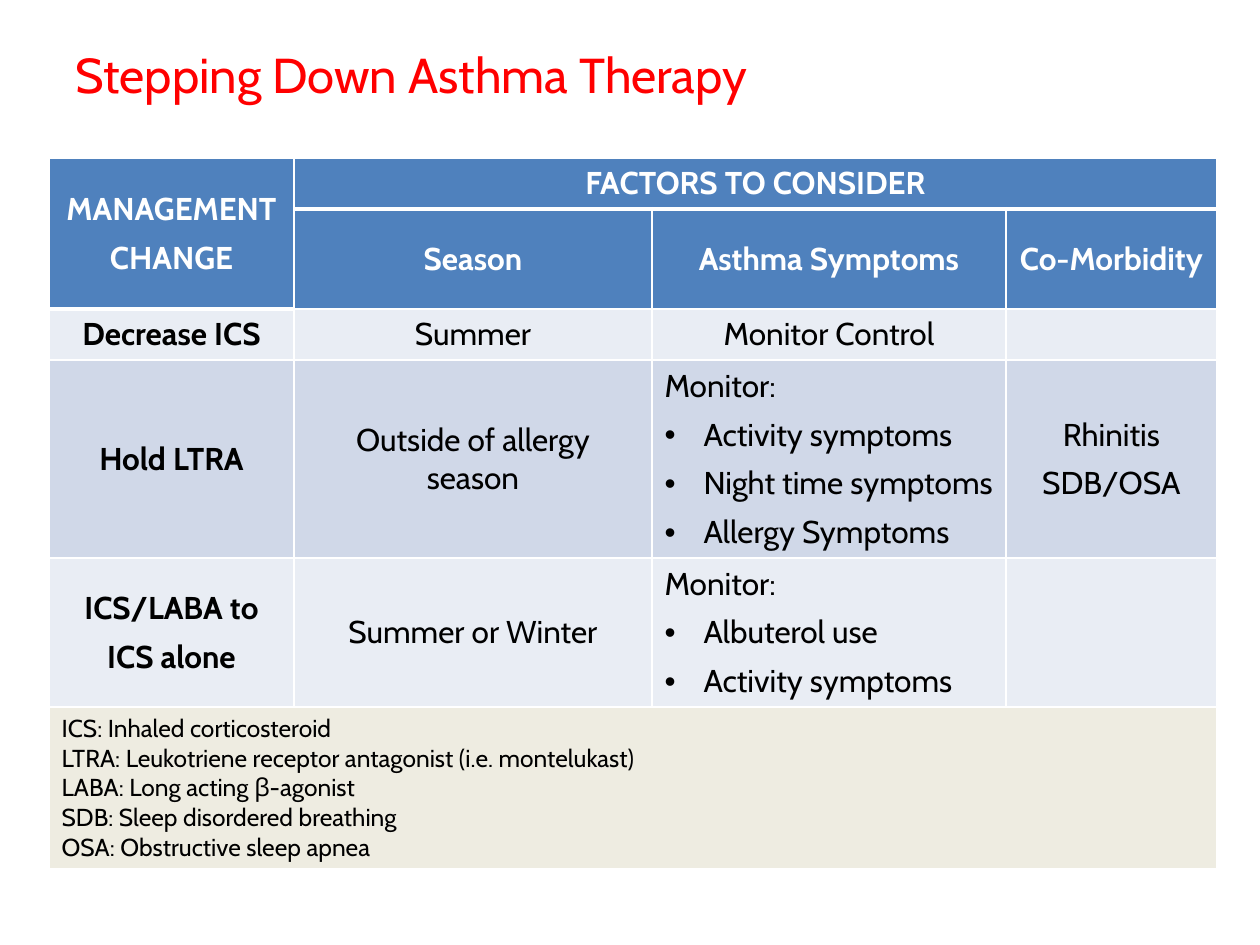
from lxml import etree
from pptx import Presentation
from pptx.dml.color import RGBColor
from pptx.enum.text import MSO_ANCHOR, PP_ALIGN
from pptx.oxml.ns import qn
from pptx.util import Emu, Pt

LEFT, CENTER = PP_ALIGN.LEFT, PP_ALIGN.CENTER
TOP, MIDDLE = MSO_ANCHOR.TOP, MSO_ANCHOR.MIDDLE

RED = RGBColor(0xFF, 0x00, 0x00)
WHITE = RGBColor(0xFF, 0xFF, 0xFF)
BLACK = RGBColor(0x00, 0x00, 0x00)
HEADER_BLUE = RGBColor(0x4F, 0x81, 0xBD)
BAND_LIGHT = RGBColor(0xE9, 0xED, 0xF4)
BAND_DARK = RGBColor(0xD0, 0xD8, 0xE8)
LEGEND_TAN = RGBColor(0xEE, 0xEC, 0xE1)

FONT = "Cabin"
BULLET = "• "
TITLE_ONLY = 5


def px(n):
    return Emu(round(n * 914400 / 126))


def add_border(cell, side, points):
    tc_pr = cell._tc.get_or_add_tcPr()
    line = etree.SubElement(tc_pr, qn(f"a:ln{side}"), w=str(Pt(points)))
    fill = etree.SubElement(line, qn("a:solidFill"))
    etree.SubElement(fill, qn("a:srgbClr"), val=str(WHITE))


prs = Presentation()
prs.slide_width, prs.slide_height = px(1260), px(945)
slide = prs.slides.add_slide(prs.slide_layouts[TITLE_ONLY])

# Title
title = slide.shapes.title
title.left, title.top, title.width, title.height = px(63), px(38), px(1134), px(158)
title.text_frame.text = "Stepping Down Asthma Therapy"
title.text_frame.vertical_anchor = TOP
heading = title.text_frame.paragraphs[0]
heading.alignment = LEFT
heading.font.name, heading.font.size = FONT, Pt(28)
heading.font.color.rgb = RED

# Table content: one list of lines per cell
therapy_rows = [
    [["MANAGEMENT", "CHANGE"], ["FACTORS TO CONSIDER"], [], []],
    [[], ["Season"], ["Asthma Symptoms"], ["Co-Morbidity"]],
    [["Decrease ICS"], ["Summer"], ["Monitor Control"], []],
    [["Hold LTRA"], ["Outside of allergy season"],
     ["Monitor:", "• Activity symptoms", "• Night time symptoms", "• Allergy Symptoms"],
     ["Rhinitis", "SDB/OSA"]],
    [["ICS/LABA to", "ICS alone"], ["Summer or Winter"],
     ["Monitor:", "• Albuterol use", "• Activity symptoms"], []],
    [["ICS: Inhaled corticosteroid",
      "LTRA: Leukotriene receptor antagonist (i.e. montelukast)",
      "LABA: Long acting β-agonist",
      "SDB: Sleep disordered breathing",
      "OSA: Obstructive sleep apnea"], [], [], []],
]
row_fills = [HEADER_BLUE, HEADER_BLUE, BAND_LIGHT, BAND_DARK, BAND_LIGHT, LEGEND_TAN]
row_heights = [50, 100, 51, 198, 149, 161]
column_widths = [245, 358, 354, 211]
LEGEND_ROW = len(therapy_rows) - 1

# Table grid
therapy = slide.shapes.add_table(
    len(row_heights), len(column_widths), px(49), px(158),
    px(sum(column_widths)), px(sum(row_heights))).table
for column, width in zip(therapy.columns, column_widths):
    column.width = px(width)
for row, height in zip(therapy.rows, row_heights):
    row.height = px(height)
therapy.cell(0, 0).merge(therapy.cell(1, 0))
therapy.cell(0, 1).merge(therapy.cell(0, 3))
therapy.cell(LEGEND_ROW, 0).merge(therapy.cell(LEGEND_ROW, 3))

# Cells
for r, row in enumerate(therapy_rows):
    is_header, is_legend = r < 2, r == LEGEND_ROW
    for c, lines in enumerate(row):
        cell = therapy.cell(r, c)
        under_header = r == 0 or (r, c) == (1, 0)
        for side, points in (("L", 1), ("R", 1), ("T", 1), ("B", 3 if under_header else 1)):
            add_border(cell, side, points)
        cell.fill.solid()
        cell.fill.fore_color.rgb = row_fills[r]
        cell.vertical_anchor = MIDDLE
        if not lines:
            continue

        cell.text_frame.text = "\n".join(line.removeprefix(BULLET) for line in lines)
        is_checklist = lines[0] == "Monitor:"
        for line, paragraph in zip(lines, cell.text_frame.paragraphs):
            if line.startswith(BULLET):
                p_pr = paragraph._p.get_or_add_pPr()
                p_pr.set("marL", str(px(39)))
                p_pr.set("indent", str(-px(39)))
                etree.SubElement(p_pr, qn("a:buFont"), typeface="Arial")
                etree.SubElement(p_pr, qn("a:buChar"), char="•")
            paragraph.alignment = LEFT if is_legend or is_checklist else CENTER
            paragraph.space_after = Pt(0 if is_legend else 12 if (r, c) == (0, 1) else 6)
            for run in paragraph.runs:
                run.font.name = FONT
                run.font.size = Pt(14 if is_legend else 18)
                run.font.bold = is_header or (c == 0 and not is_legend)
                run.font.color.rgb = WHITE if is_header else BLACK

prs.save("out.pptx")
